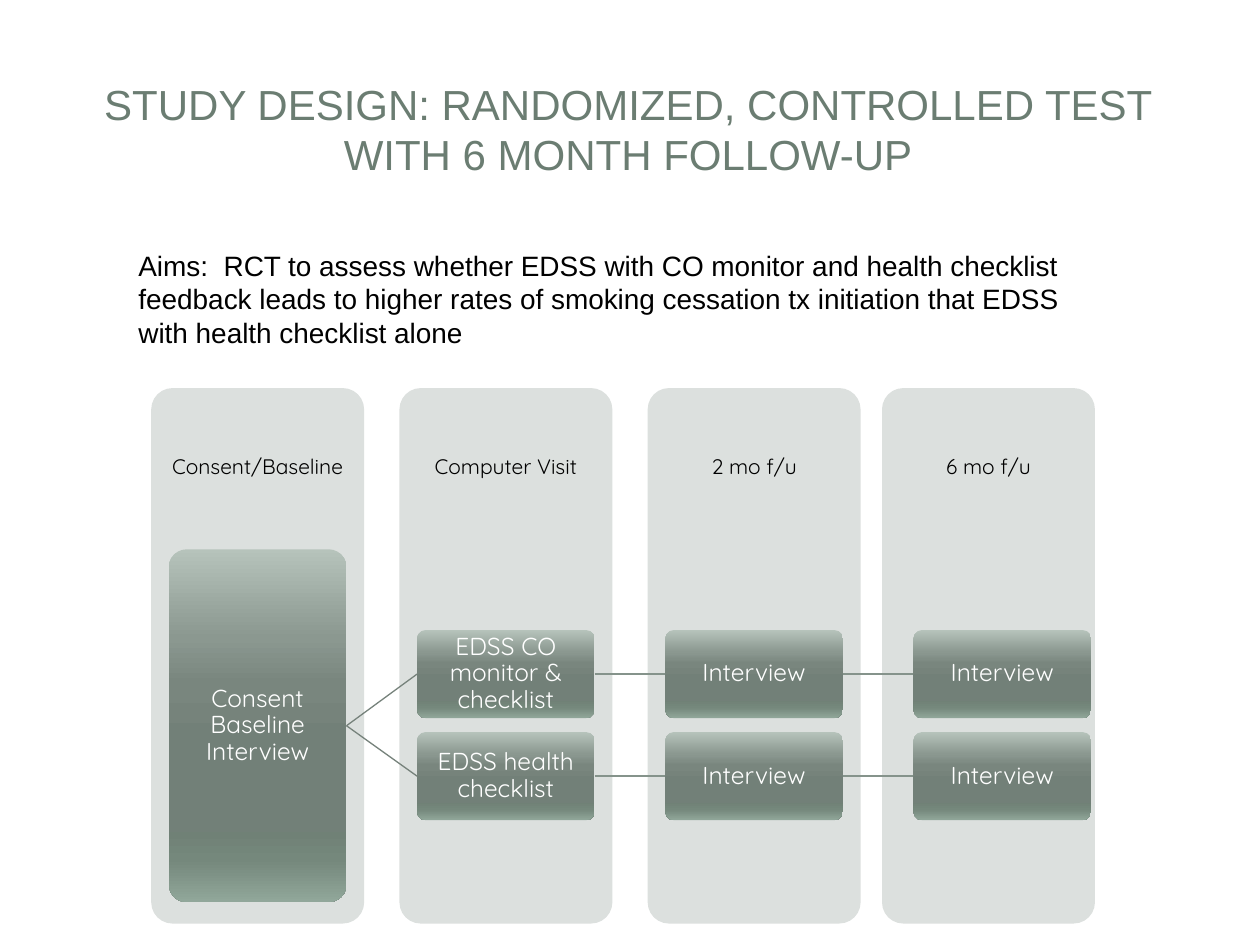
from lxml import etree
from pptx import Presentation
from pptx.dml.color import RGBColor
from pptx.enum.shapes import MSO_CONNECTOR, MSO_SHAPE
from pptx.enum.text import MSO_ANCHOR, MSO_AUTO_SIZE, PP_ALIGN
from pptx.oxml.ns import qn
from pptx.util import Inches, Pt

COLORS = {
    "title": "6B7D72", "text": "000000", "box_text": "FFFFFF",
    "panel": "DCE0DE", "branch": "76827B", "link": "85938B",
}
GRADIENT = [(0, "B6C3BB"), (25, "8B9890"), (38, "79867E"), (55, "728078"),
            (80, "708176"), (88, "75887C"), (100, "91A79A")]


def write(shape, text, font, size, color, align=PP_ALIGN.CENTER, spacing=0.9, inset=None):
    frame = shape.text_frame
    frame.text = text
    frame.word_wrap = True
    frame.auto_size = MSO_AUTO_SIZE.NONE
    frame.vertical_anchor = MSO_ANCHOR.MIDDLE
    if inset is not None:
        frame.margin_left = frame.margin_right = Inches(inset)
        frame.margin_top = frame.margin_bottom = Inches(inset)
    para = frame.paragraphs[0]
    para.alignment = align
    para.line_spacing = spacing
    span = para.runs[0]
    span.font.name = font
    span.font.size = Pt(size)
    span.font.color.rgb = RGBColor.from_string(COLORS[color])


def add_rounded(left, top, width, height):
    shape = page.shapes.add_shape(MSO_SHAPE.ROUNDED_RECTANGLE, Inches(left), Inches(top),
                                  Inches(width), Inches(height))
    shape.adjustments[0] = 0.1
    shape.shadow.inherit = False
    shape.line.fill.background()
    return shape


deck = Presentation()
deck.slide_width, deck.slide_height = Inches(10), Inches(7.5)
page = deck.slides.add_slide(deck.slide_layouts[5])

title = page.shapes.title
title.left, title.top, title.width, title.height = (
    Inches(0.47), Inches(0.45), Inches(9.03), Inches(1.14))
write(title, "STUDY DESIGN: RANDOMIZED, CONTROLLED TEST WITH 6 MONTH FOLLOW-UP",
      "Arial", 24, "title", spacing=1.0)

PANEL_TOP, PANEL_WIDTH = 3.08, 1.69
panels = [(1.2, "Consent/Baseline"), (3.17, "Computer Visit"), (5.14, "2 mo f/u"), (7, "6 mo f/u")]
for left, heading in panels:
    panel = add_rounded(left, PANEL_TOP, PANEL_WIDTH, 4.25)
    panel.fill.solid()
    panel.fill.fore_color.rgb = RGBColor.from_string(COLORS["panel"])
    label = page.shapes.add_textbox(Inches(left), Inches(PANEL_TOP), Inches(PANEL_WIDTH), Inches(1.27))
    write(label, heading, "Quicksand", 12, "text", inset=0.09)

BOX_WIDTH, BOX_HEIGHT, BOX_STEP, FIRST_LEFT = 1.41, 0.7, 1.97, 1.34
BASELINE_TOP, BASELINE_HEIGHT = 4.36, 2.8
arms = [(5, ["EDSS CO monitor & checklist", "Interview", "Interview"]),
        (5.81, ["EDSS health checklist", "Interview", "Interview"])]

boxes = [(FIRST_LEFT, BASELINE_TOP, BASELINE_HEIGHT, "Consent Baseline Interview")]
links = []
for top, steps in arms:
    start_y = BASELINE_TOP + BASELINE_HEIGHT / 2
    middle = top + BOX_HEIGHT / 2
    color = "branch"
    for number, step in enumerate(steps, start=1):
        left = FIRST_LEFT + number * BOX_STEP
        boxes.append((left, top, BOX_HEIGHT, step))
        links.append((left - BOX_STEP + BOX_WIDTH, start_y, left, middle, color))
        start_y, color = middle, "link"

for start_x, start_y, end_x, end_y, color in links:
    link = page.shapes.add_connector(MSO_CONNECTOR.STRAIGHT, Inches(start_x), Inches(start_y),
                                     Inches(end_x), Inches(end_y))
    link.line.color.rgb = RGBColor.from_string(COLORS[color])
    link.line.width = Pt(0.75)
    etree.SubElement(link._element.spPr, qn("a:effectLst"))

for left, top, height, text in boxes:
    box = add_rounded(left, top, BOX_WIDTH, height)
    box.fill.gradient()
    box.fill.gradient_angle = 270
    stops = box._element.spPr.find(qn("a:gradFill")).find(qn("a:gsLst"))
    for stop in list(stops):
        stops.remove(stop)
    for position, color in GRADIENT:
        stop = etree.SubElement(stops, qn("a:gs"), pos=str(position * 1000))
        etree.SubElement(stop, qn("a:srgbClr"), val=color)
    write(box, text, "Quicksand", 14, "box_text", inset=0.01)

aims = page.shapes.add_textbox(Inches(1), Inches(1.92), Inches(7.92), Inches(1.31))
write(aims, "Aims:  RCT to assess whether EDSS with CO monitor and health checklist feedback "
      "leads to higher rates of smoking cessation tx initiation that EDSS with health checklist alone",
      "Arial", 16, "text", align=PP_ALIGN.LEFT, spacing=1.0)
aims.text_frame.vertical_anchor = MSO_ANCHOR.TOP

deck.save("out.pptx")
